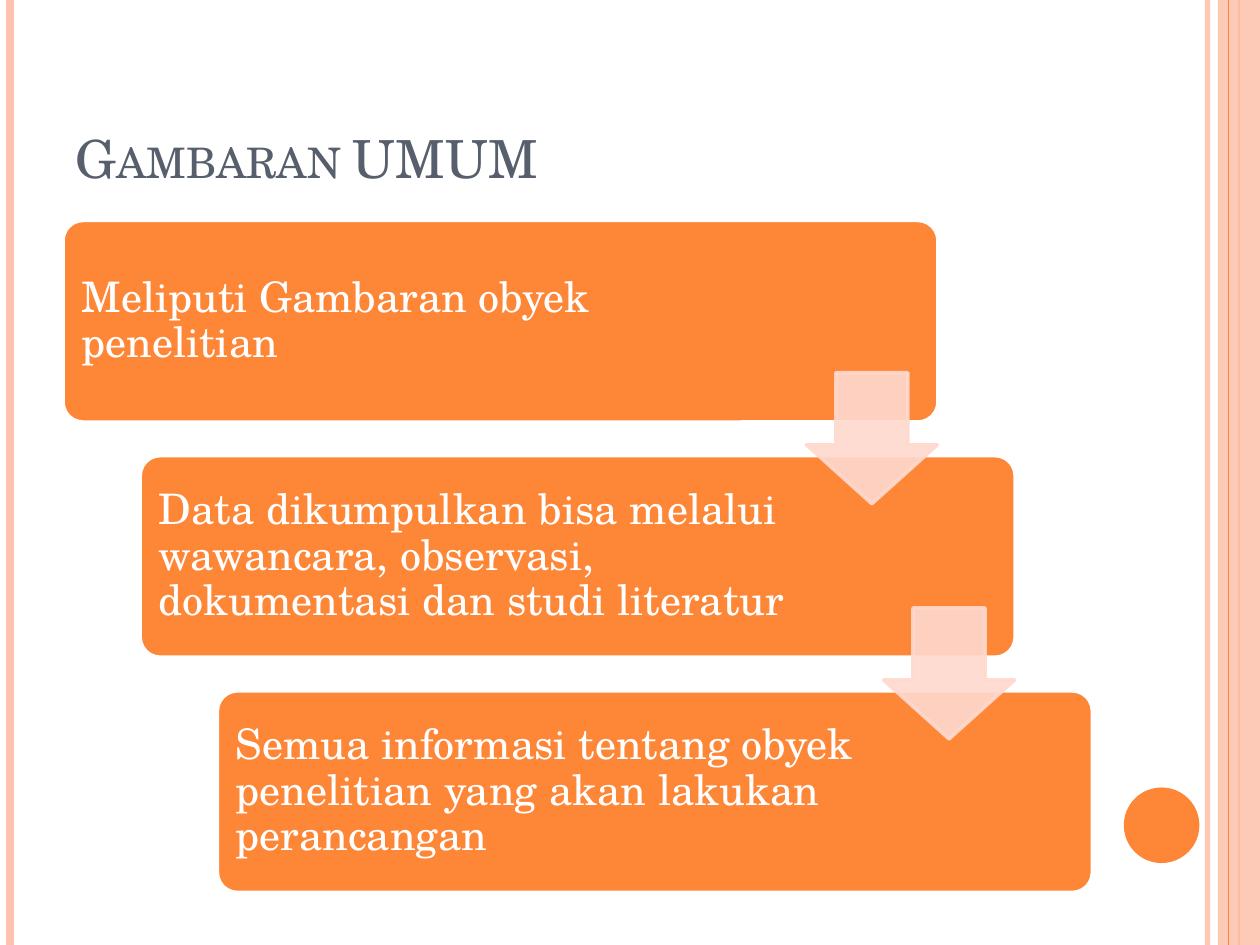
import pptx
import pptx.dml.color
import pptx.enum.shapes
import pptx.enum.text
import pptx.oxml.ns
import pptx.oxml.xmlchemy
import pptx.util
import lxml.etree

Pt = pptx.util.Pt
KIND = pptx.enum.shapes.MSO_SHAPE
ANCHOR = pptx.enum.text.MSO_ANCHOR
qn = pptx.oxml.ns.qn

WIDE, HIGH = 720, 540
FONT = "TeX Gyre Schola"
HUES = {
    "main": "FE8637",
    "band": "FEC3AE",
    "arrow": "FFD9CE",
    "title": "575F6D",
    "white": "FFFFFF",
}
STEPS = [
    "Meliputi Gambaran obyek penelitian",
    "Data dikumpulkan bisa melalui wawancara, observasi, "
    "dokumentasi dan studi literatur",
    "Semua informasi tentang obyek penelitian yang akan lakukan perancangan",
]
SHIFT, DROP = 44.1, 134.4


def hue(name):
    return pptx.dml.color.RGBColor.from_string(HUES[name])


def fade(item, rate):
    """Set the opacity, in percent, of the item's fill and line colours."""
    for tint in item._element.spPr.iter(qn("a:srgbClr")):
        lxml.etree.SubElement(tint, qn("a:alpha")).set("val", str(rate * 1000))


def add_rule(slide, x, name, width, rate=100):
    """Draw a vertical line over the full slide height."""
    rule = slide.shapes.add_connector(
        pptx.enum.shapes.MSO_CONNECTOR.STRAIGHT, Pt(x), Pt(0), Pt(x), Pt(HIGH))
    rule.line.color.rgb = hue(name)
    rule.line.width = Pt(width)
    lxml.etree.SubElement(rule._element.spPr, qn("a:effectLst"))
    if rate < 100:
        fade(rule, rate)


def add_shape(slide, kind, box, fill, edge=None, adjust=(), rate=100):
    shape = slide.shapes.add_shape(kind, *map(Pt, box))
    shape.shadow.inherit = False
    shape.fill.solid()
    shape.fill.fore_color.rgb = hue(fill)
    if edge:
        shape.line.color.rgb = hue(edge)
        shape.line.width = Pt(2)
    else:
        shape.line.fill.background()
    for i, value in enumerate(adjust):
        shape.adjustments[i] = value
    if rate < 100:
        fade(shape, rate)


def add_text(slide, box, text, size, name, anchor):
    """Add a wrapped text box and return its frame."""
    frame = slide.shapes.add_textbox(*map(Pt, box)).text_frame
    frame.word_wrap = True
    frame.vertical_anchor = anchor
    frame.text = text
    font = frame.paragraphs[0].runs[0].font
    font.name = FONT
    font.size = Pt(size)
    font.color.rgb = hue(name)
    return frame


def add_frame(slide):
    """Draw the bands and the dot at the slide's edges."""
    add_rule(slide, 690, "band", 3, 93)
    add_rule(slide, 5.9, "band", 4.5)
    add_rule(slide, 708, "main", 1.5)
    add_shape(slide, KIND.RECTANGLE, (696, 0, WIDE - 696, HIGH), "band", rate=87)
    add_rule(slide, 702, "main", 0.75)
    add_shape(slide, KIND.OVAL, (642.2, 450, 43.2, 43.2), "main")


def add_title(slide, text):
    frame = add_text(slide, (36, 21.6, 588, 90), text, 30, "title", ANCHOR.BOTTOM)
    frame.paragraphs[0].runs[0]._r.get_or_add_rPr().set("cap", "small")


def add_step(slide, i, text):
    x, y = 36 + i * SHIFT, 126 + i * DROP
    add_shape(slide, KIND.ROUNDED_RECTANGLE, (x, y, 500, 115.2),
              "main", "white", [0.1])
    frame = add_text(slide, (x + 3.4, y + 3.4, 375, 108.4), text,
                     24, "white", ANCHOR.MIDDLE)
    frame.margin_left = frame.margin_right = Pt(7.2)
    frame.margin_top = frame.margin_bottom = Pt(7.2)
    frame.paragraphs[0].line_spacing = 0.9


def add_arrow(slide, i):
    box = (460.8 + i * SHIFT, 213 + i * DROP, 74.9, 74.9)
    add_shape(slide, KIND.DOWN_ARROW, box, "arrow", "arrow", [0.55, 0.45], 90)


def main():
    deck = pptx.Presentation()
    deck.slide_width, deck.slide_height = Pt(WIDE), Pt(HIGH)
    slide = deck.slides.add_slide(deck.slide_layouts[6])
    add_frame(slide)
    add_title(slide, "Gambaran UMUM")
    for i, text in enumerate(STEPS):
        add_step(slide, i, text)
    for i in range(len(STEPS) - 1):
        add_arrow(slide, i)
    deck.save("out.pptx")


if __name__ == "__main__":
    main()
